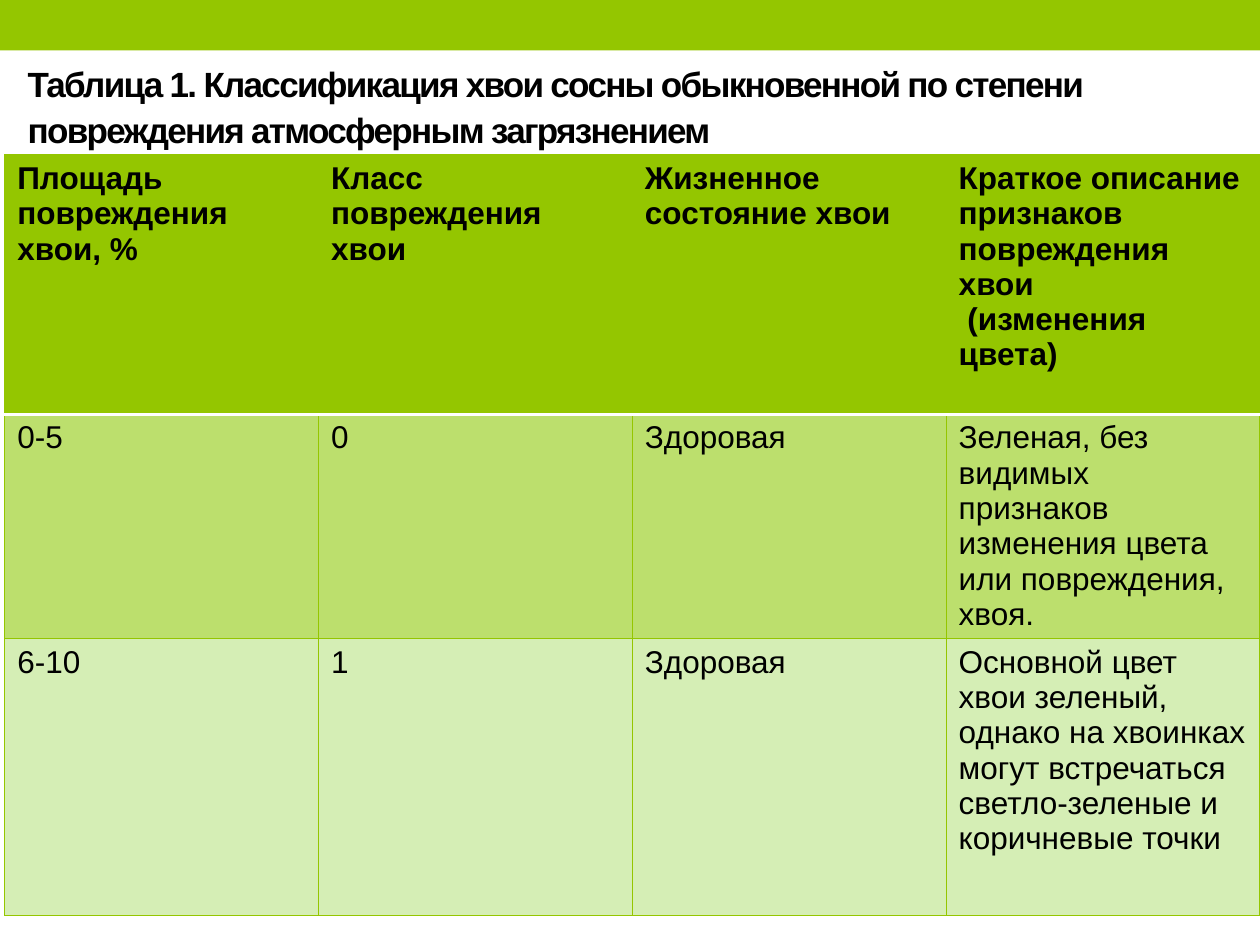
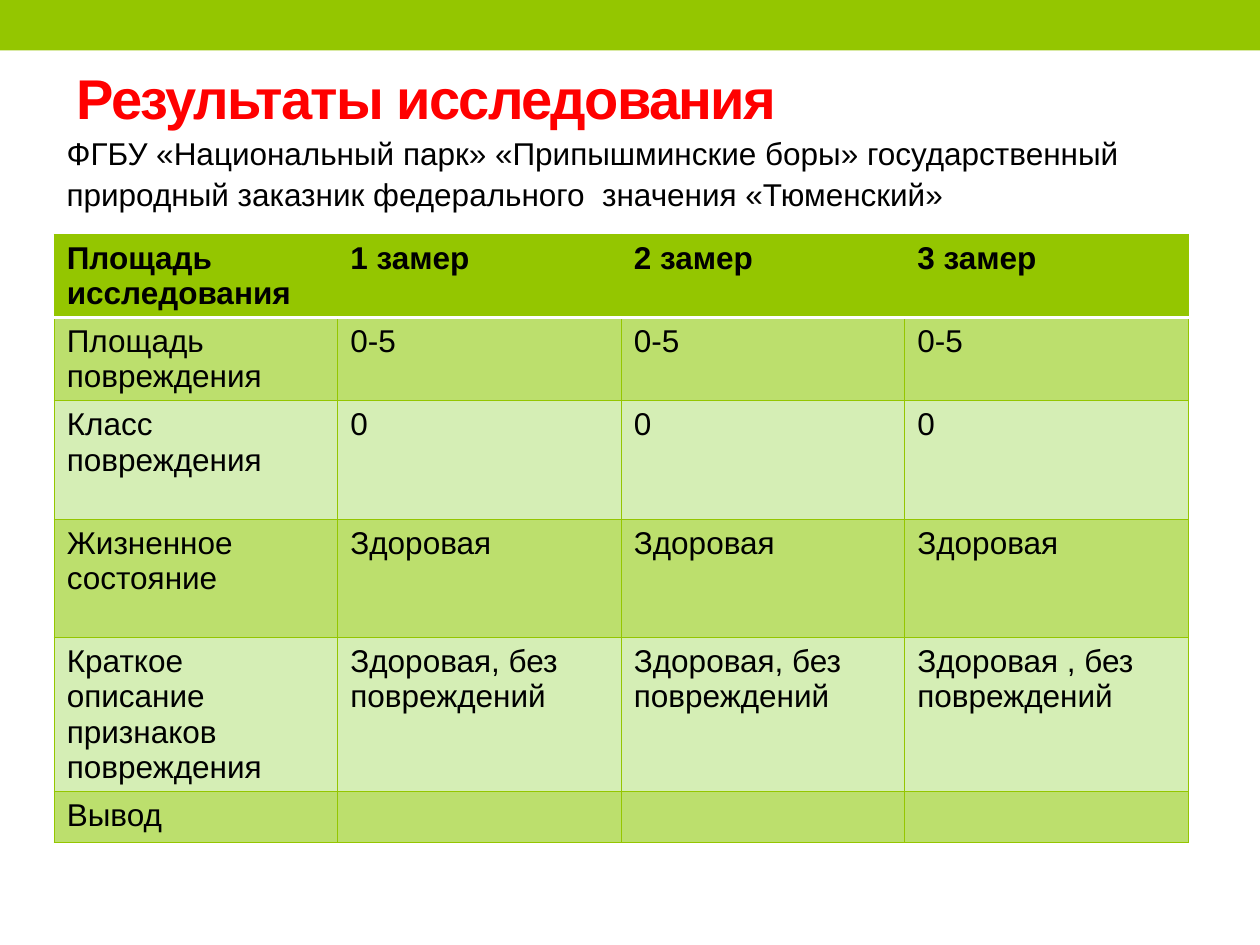
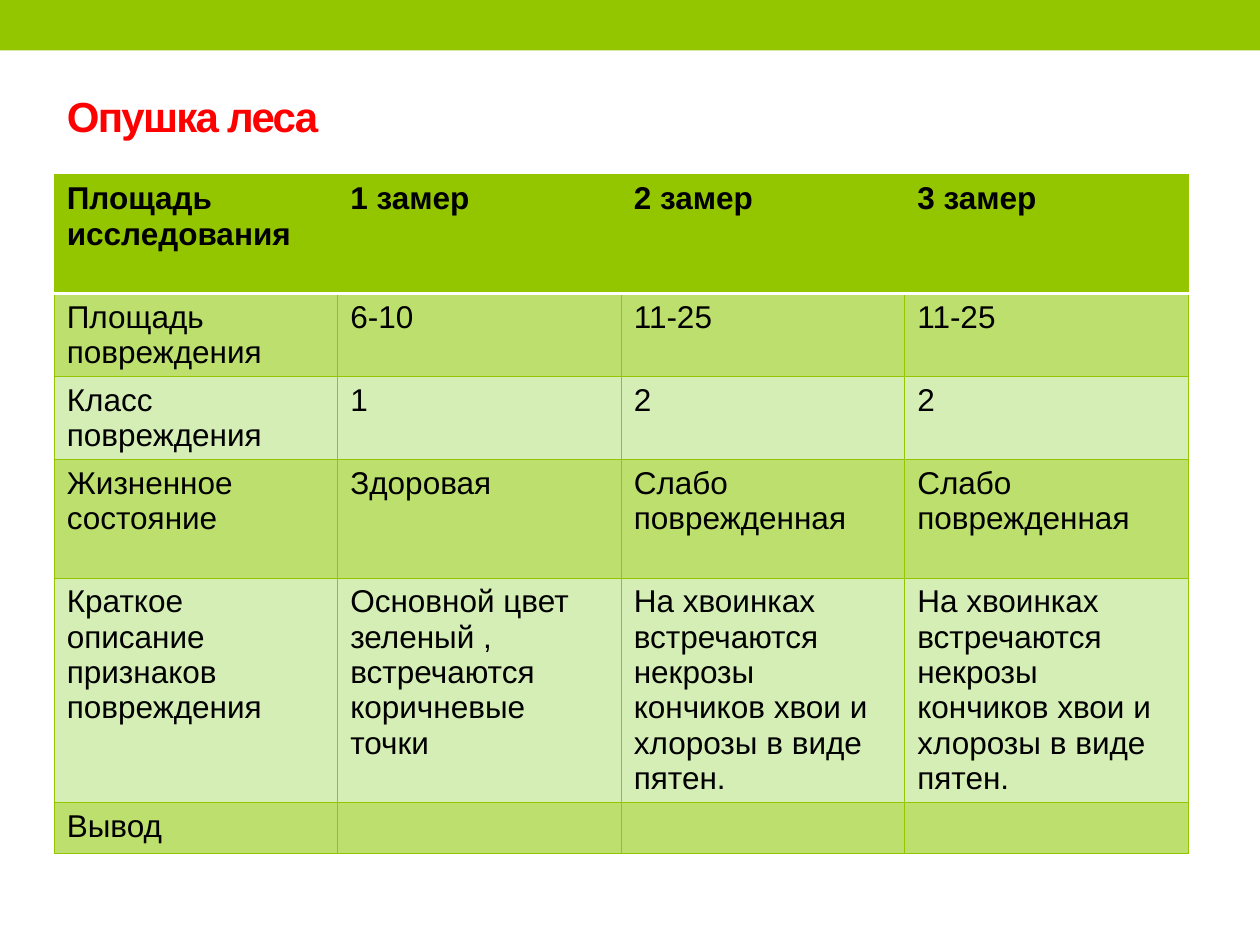
from pptx import Presentation
from pptx.dml.color import RGBColor
from pptx.enum.shapes import MSO_SHAPE as SHAPE
from pptx.enum.text import MSO_ANCHOR as ANCHOR, MSO_AUTO_SIZE as AUTO, PP_ALIGN as ALIGN
from pptx.oxml.ns import qn
from pptx.util import Pt
from lxml.etree import SubElement

COLORS = {
    "green": "94C600",
    "band_dark": "BCDF6D",
    "band_light": "D5EEB5",
    "white": "FFFFFF",
    "black": "000000",
    "red": "FF0000",
}
FONT = "Arial"
SLIDE_W, SLIDE_H = 720, 540
BAND_H = 28.8
LINE_H, CELL_PAD, MIN_ROW_H = 20.15, 7.2, 29.2

MEASURES = ["Площадь исследования", "1 замер", "2 замер", "3 замер"]
NECROSIS = "На хвоинках встречаются некрозы кончиков хвои и хлорозы в виде пятен."

CLASSES = [
    ["Площадь повреждения хвои, %", "Класс повреждения хвои", "Жизненное состояние хвои",
     "Краткое описание признаков повреждения хвои\n (изменения цвета)"],
    ["0-5", "0", "Здоровая",
     "Зеленая, без видимых признаков изменения цвета или повреждения, хвоя."],
    ["6-10", "1", "Здоровая",
     "Основной цвет хвои зеленый, однако на хвоинках могут встречаться "
     "светло-зеленые и коричневые точки"],
]


def rgb(name):
    return RGBColor.from_string(COLORS[name])


def write(tf, text, size=18, color="black", bold=False, spacing=None, tracking=None):
    """Fill a text frame, one paragraph per line of text."""
    tf.word_wrap = True
    for i, line in enumerate(text.split("\n")):
        p = tf.paragraphs[0] if i == 0 else tf.add_paragraph()
        p.alignment = ALIGN.LEFT
        if spacing:
            p.line_spacing = spacing
        r = p.add_run()
        r.text = line
        r.font.name, r.font.size, r.font.bold = FONT, Pt(size), bold
        r.font.color.rgb = rgb(color)
        if tracking:
            r.font._element.set("spc", str(tracking))


def add_master_band(prs, slide):
    """Draw the top band and move it to the master, shared by all slides."""
    sp = slide.shapes.add_shape(SHAPE.RECTANGLE, 0, 0, Pt(SLIDE_W), Pt(BAND_H))
    sp.shadow.inherit = False
    sp.fill.solid()
    sp.fill.fore_color.rgb = rgb("green")
    sp.line.fill.background()
    prs.slide_master.placeholders[0].element.addprevious(sp.element)


def add_title(slide, box, text, size, color):
    sp = slide.shapes.title
    sp.left, sp.top, sp.width, sp.height = map(Pt, box)
    tf = sp.text_frame
    tf.auto_size = AUTO.NONE
    tf.vertical_anchor = ANCHOR.MIDDLE
    write(tf, text, size=size, color=color, bold=True, spacing=1.08, tracking=-100)


def add_note(slide, box, text):
    tf = slide.shapes.add_textbox(*map(Pt, box)).text_frame
    write(tf, text, spacing=1.08)


def set_border(cell, side, color, width):
    ln = SubElement(cell._tc.get_or_add_tcPr(), qn(f"a:ln{side}"), w=str(Pt(width)))
    fill = SubElement(ln, qn("a:solidFill"))
    SubElement(fill, qn("a:srgbClr"), val=COLORS[color])


def format_cell(cell, row, text):
    # Borders: a white rule parts the header from the body
    for side in "LRTB":
        is_rule = (row, side) in ((0, "B"), (1, "T"))
        set_border(cell, side, *(("white", 2.08) if is_rule else ("green", 0.75)))
    cell.fill.solid()
    fill = "green" if row == 0 else ("band_dark" if row % 2 else "band_light")
    cell.fill.fore_color.rgb = rgb(fill)
    write(cell.text_frame, text, bold=row == 0)


def add_banded_table(slide, left, top, width, rows, line_counts):
    """Equal columns; each row is as high as its number of text lines asks."""
    heights = [max(MIN_ROW_H, n * LINE_H + CELL_PAD) for n in line_counts]
    n_cols = len(rows[0])
    table = slide.shapes.add_table(len(rows), n_cols, Pt(left), Pt(top),
                                   Pt(width), Pt(sum(heights))).table
    for col in table.columns:
        col.width = Pt(width / n_cols)
    for i, (values, height) in enumerate(zip(rows, heights)):
        table.rows[i].height = Pt(height)
        for j, text in enumerate(values):
            format_cell(table.cell(i, j), i, text)


def survey_rows(areas, classes, states, signs):
    return [
        MEASURES,
        ["Площадь повреждения", *areas],
        ["Класс повреждения", *classes],
        ["Жизненное состояние", *states],
        ["Краткое описание признаков повреждения", *signs],
        ["Вывод", "", "", ""],
    ]


def main():
    prs = Presentation()
    prs.slide_width, prs.slide_height = Pt(SLIDE_W), Pt(SLIDE_H)
    title_only = prs.slide_layouts[5]
    classes, park, edge = (prs.slides.add_slide(title_only) for _ in range(3))
    add_master_band(prs, classes)

    # Classification of needles
    add_title(classes, (8.6, 15, 648, 90),
              "Таблица 1. Классификация хвои сосны обыкновенной по степени "
              "повреждения атмосферным загрязнением", 20, "black")
    add_banded_table(classes, 2.7, 88.4, 717.3, CLASSES, [7, 6, 7.5])

    # Results for the national park
    add_title(park, (36.7, 41.8, 647, 23.8), "Результаты исследования", 32, "red")
    add_banded_table(park, 31, 134, 648, survey_rows(
        ["0-5"] * 3, ["0"] * 3, ["Здоровая"] * 3,
        ["Здоровая, без повреждений"] * 2 + ["Здоровая , без повреждений"],
    ), [2, 2, 3, 3, 4, 1])
    add_note(park, (31, 71.3, 689, 51),
             "ФГБУ «Национальный парк» «Припышминские боры» государственный "
             "природный заказник федерального  значения «Тюменский»")

    # Results for the forest edge
    add_title(edge, (31, 26, 648, 77.8), "Опушка леса", 24, "red")
    add_banded_table(edge, 31, 100, 648, survey_rows(
        ["6-10", "11-25", "11-25"], ["1", "2", "2"],
        ["Здоровая"] + ["Слабо поврежденная"] * 2,
        ["Основной цвет зеленый , встречаются коричневые точки"] + [NECROSIS] * 2,
    ), [3, 2, 2, 3, 6, 1])

    prs.save("out.pptx")


if __name__ == "__main__":
    main()
